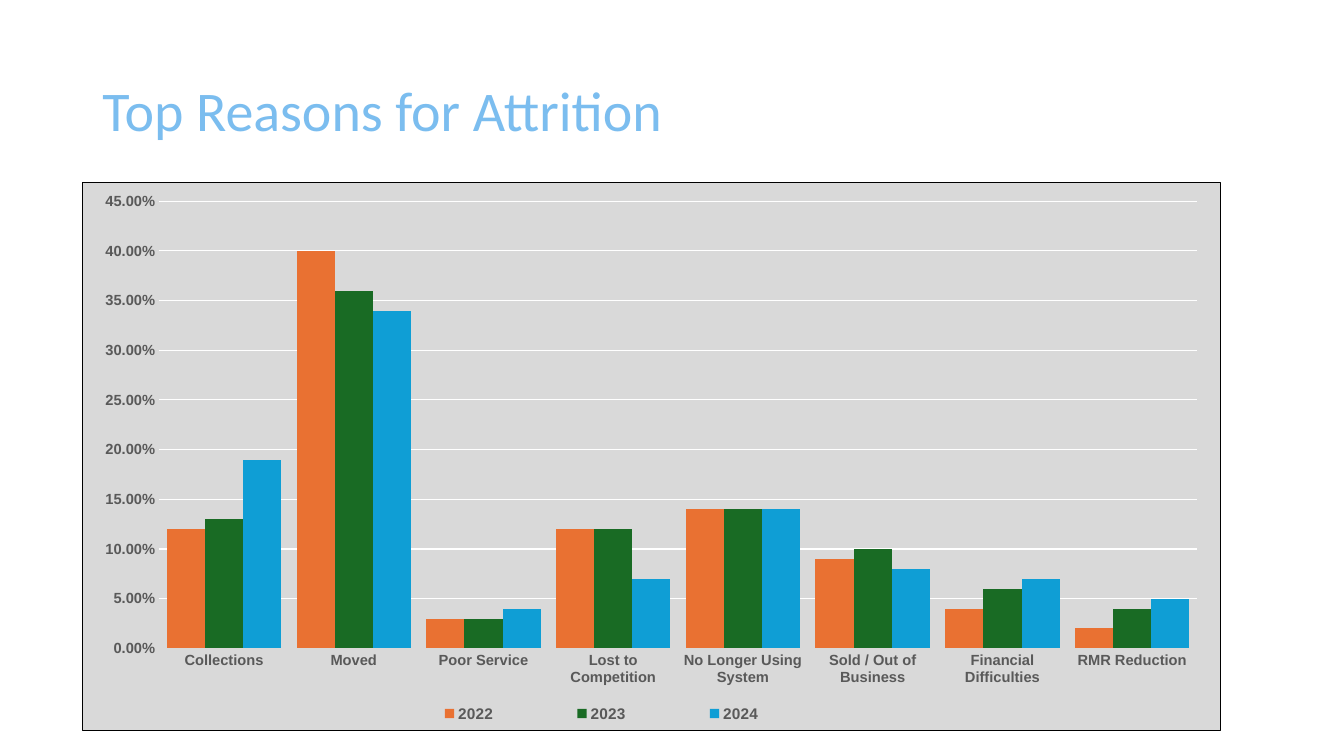
from lxml import etree
from pptx import Presentation
from pptx.chart.data import CategoryChartData
from pptx.dml.color import RGBColor
from pptx.enum import chart as kinds, text
from pptx.oxml import parse_xml
from pptx.oxml.ns import nsdecls, qn
from pptx.util import Cm, Pt

# Content
TITLE = "Top Reasons for Attrition"
REASONS = ["Collections", "Moved", "Poor Service", "Lost to Competition",
           "No Longer Using System", "Sold / Out of Business",
           "Financial Difficulties", "RMR Reduction"]
YEARS = [
    ("2022", "E97132", [0.12, 0.4, 0.03, 0.12, 0.14, 0.09, 0.04, 0.02]),
    ("2023", "196B24", [0.13, 0.36, 0.03, 0.12, 0.14, 0.1, 0.06, 0.04]),
    ("2024", "0F9ED5", [0.19, 0.34, 0.04, 0.07, 0.14, 0.08, 0.07, 0.05]),
]
GREY, LABEL, WHITE = "D9D9D9", "595959", "FFFFFF"

# Left, top, width, height in cm; plot and legend are measured inside the chart
TITLE_AREA = (2.33, 1.02, 29.21, 3.68)
CHART_AREA = (2.07, 4.58, 28.69, 13.83)
PLOT_AREA = (1.93, 0.48, 26.18, 11.29)
LEGEND_AREA = (7.14, 13.04, 11.9, 0.75)


def color(value):
    return RGBColor.from_string(value)


def style_font(font, size, value, name="Arial", bold=True):
    font.size, font.name, font.bold = Pt(size), name, bold
    font.color.rgb = color(value)


def style_line(line, value):
    line.color.rgb = color(value)
    line.width = Pt(0.75)


def place(parent, area, inner=False):
    """Fix the plot or legend at an area within the chart."""
    for old in parent.findall(qn("c:layout")):
        parent.remove(old)
    layout = etree.Element(qn("c:layout"))
    manual = etree.SubElement(layout, qn("c:manualLayout"))
    settings = [("layoutTarget", "inner")] if inner else []
    settings += [("xMode", "edge"), ("yMode", "edge")]
    sizes = CHART_AREA[2:] * 2
    settings += [(key, f"{part / whole:.4f}")
                 for key, part, whole in zip("xywh", area, sizes)]
    for key, value in settings:
        etree.SubElement(manual, qn(f"c:{key}")).set("val", value)
    if inner:
        parent.insert(0, layout)
    else:
        parent.find(qn("c:legendPos")).addnext(layout)


deck = Presentation()
deck.slide_width, deck.slide_height = Cm(33.87), Cm(19.05)
page = deck.slides.add_slide(deck.slide_layouts[6])

# Title
box = page.shapes.add_textbox(*map(Cm, TITLE_AREA))
frame = box.text_frame
frame.word_wrap = True
frame.vertical_anchor = text.MSO_ANCHOR.MIDDLE
frame.text = TITLE
para = frame.paragraphs[0]
para.line_spacing = 0.9
style_font(para.runs[0].font, 40, "7BBDEF", "Calibri", False)

# Chart
data = CategoryChartData(number_format="0.00%")
data.categories = REASONS
for year, _, shares in YEARS:
    data.add_series(year, shares)
chart = page.shapes.add_chart(kinds.XL_CHART_TYPE.COLUMN_CLUSTERED,
                              *map(Cm, CHART_AREA), data).chart
style_font(chart.font, 10, "000000")
chart.has_title = False
plot = chart.plots[0]
plot.gap_width, plot.overlap = 40, 0
plot.vary_by_categories = False
for series, (_, fill, _) in zip(plot.series, YEARS):
    series.format.fill.solid()
    series.format.fill.fore_color.rgb = color(fill)

# Axes
for axis in (chart.category_axis, chart.value_axis):
    axis.major_tick_mark = axis.minor_tick_mark = kinds.XL_TICK_MARK.NONE
    style_font(axis.tick_labels.font, 10.5, LABEL)
style_line(chart.category_axis.format.line, GREY)
shares_axis = chart.value_axis
shares_axis.format.line.fill.background()
shares_axis.minimum_scale, shares_axis.maximum_scale = 0, 0.45
shares_axis.major_unit = 0.05
shares_axis.tick_labels.number_format = "0.00%"
shares_axis.tick_labels.number_format_is_linked = False
style_line(shares_axis.major_gridlines.format.line, WHITE)

# Legend
chart.has_legend = True
chart.legend.position = kinds.XL_LEGEND_POSITION.BOTTOM
chart.legend.include_in_layout = False
style_font(chart.legend.font, 11, LABEL)

# Chart background, border and inner layout
root = chart.element
body = root.find(qn("c:chart"))
body.addnext(parse_xml(
    f'<c:spPr {nsdecls("c", "a")}>'
    f'<a:solidFill><a:srgbClr val="{GREY}"/></a:solidFill>'
    f'<a:ln w="{Pt(0.75)}"><a:solidFill><a:srgbClr val="000000"/></a:solidFill></a:ln>'
    '</c:spPr>'))
place(body.find(qn("c:plotArea")), PLOT_AREA, inner=True)
place(body.find(qn("c:legend")), LEGEND_AREA)

deck.save("out.pptx")
